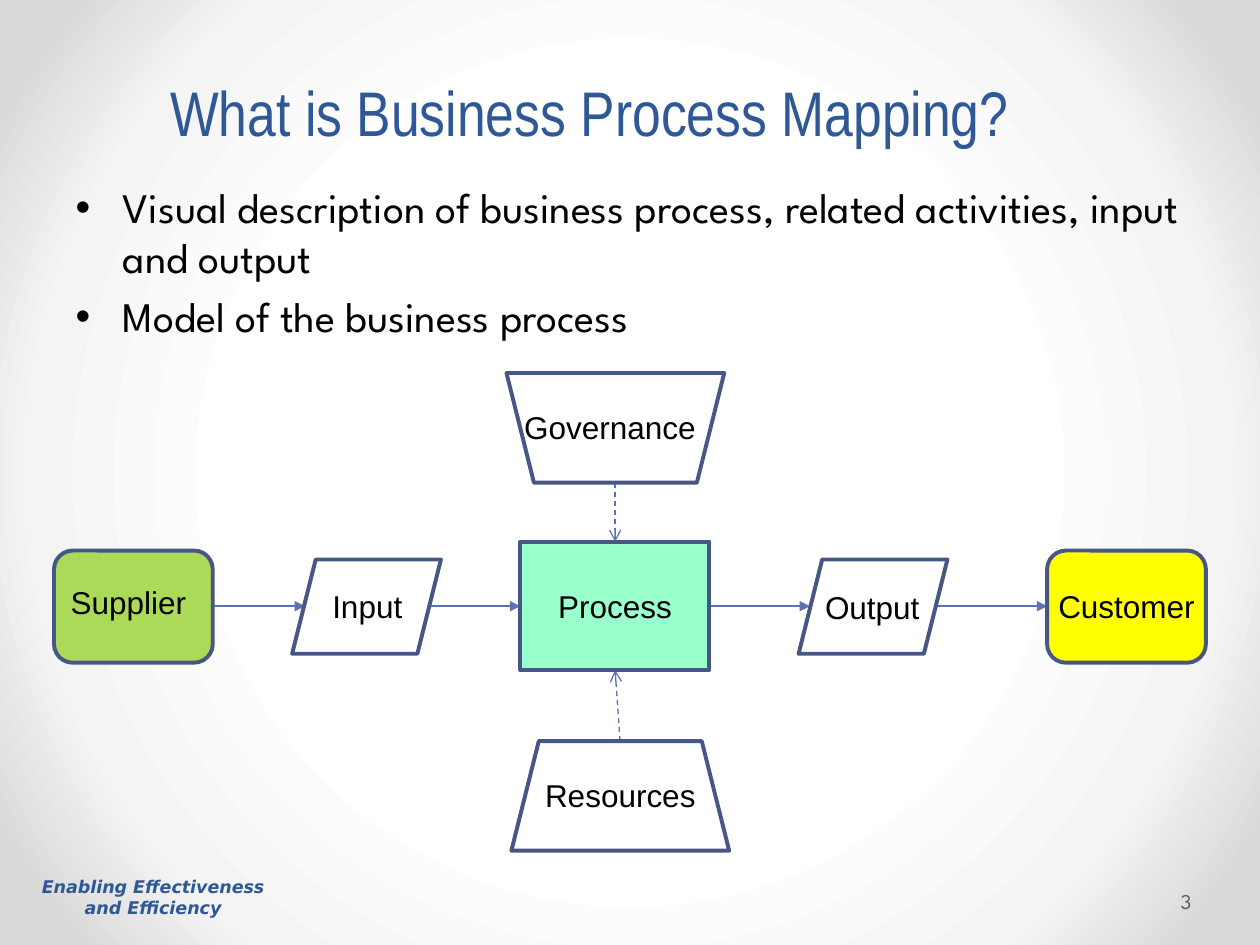
from dataclasses import dataclass

from lxml import etree
from pptx import Presentation
from pptx import util as u
from pptx.dml.color import RGBColor
from pptx.enum import dml, shapes, text
from pptx.oxml import ns


@dataclass(frozen=True)
class Theme:
    brand: str = "2F5897"
    ink: str = "000000"
    muted: str = "595959"
    outline: str = "475785"
    arrow: str = "5C72B2"
    process: str = "99FFCC"
    supplier: str = "ABD958"
    customer: str = "FFFF00"
    title_size: int = 36
    body_size: int = 24
    label_size: int = 18
    number_size: int = 12
    footer_size: int = 10


theme = Theme()


def write(paragraph, words, font, size, color, align=None):
    """Add one formatted run to a paragraph."""
    run = paragraph.add_run()
    run.text = words
    run.font.name = font
    run.font.size = u.Pt(size)
    run.font.color.rgb = RGBColor.from_string(color)
    paragraph.alignment = align
    return run


def place(shape, left, top, width, height):
    """Position a shape, in centimetres."""
    shape.left, shape.top = u.Cm(left), u.Cm(top)
    shape.width, shape.height = u.Cm(width), u.Cm(height)


prs = Presentation()
prs.slide_width, prs.slide_height = u.Cm(25.4), u.Cm(19.05)
slide = prs.slides.add_slide(prs.slide_layouts[1])
CENTER = text.PP_ALIGN.CENTER

# Background: white centre fading to grey edges
backdrop = slide.background.fill
backdrop.gradient()
gradient = slide.background._cSld.find(".//" + ns.qn("a:gradFill"))
for child in list(gradient):
    gradient.remove(child)
stops = etree.SubElement(gradient, ns.qn("a:gsLst"))
for percent, color in ((50, "FFFFFF"), (76, "F4F4F4"), (92, "DADADA")):
    stop = etree.SubElement(stops, ns.qn("a:gs"), pos=str(percent * 1000))
    etree.SubElement(stop, ns.qn("a:srgbClr"), val=color)
circle = etree.SubElement(gradient, ns.qn("a:path"), path="circle")
etree.SubElement(circle, ns.qn("a:fillToRect"), l="50000", t="50000", r="50000", b="50000")

# Footer motto
motto = slide.shapes.add_textbox(u.Cm(0.48), u.Cm(17.53), u.Cm(5.21), u.Cm(1.12)).text_frame
motto.word_wrap = True
motto.add_paragraph()
for paragraph, words in zip(motto.paragraphs, ("Enabling Effectiveness", "and Efficiency")):
    run = write(paragraph, words, "DejaVu Sans", theme.footer_size, theme.brand, CENTER)
    run.font.bold = run.font.italic = True

# Title
title = slide.shapes.title
place(title, 1.27, 0.74, 21.23, 2.39)
title.text_frame.auto_size = text.MSO_AUTO_SIZE.NONE
title.text_frame.vertical_anchor = text.MSO_ANCHOR.BOTTOM
heading = title.text_frame.paragraphs[0]
heading.line_spacing = u.Pt(58)
write(heading, "What is Business Process Mapping?", "Arial Narrow",
      theme.title_size, theme.brand, CENTER)

# Definition list, with the bullets of the template
definition = slide.placeholders[1]
place(definition, 1.27, 3.53, 22.86, 13.49)
points = definition.text_frame
points.auto_size = text.MSO_AUTO_SIZE.NONE
points.add_paragraph()
for paragraph, words in zip(points.paragraphs, (
        "Visual description of business process, related activities, input and output",
        "Model of the business process")):
    write(paragraph, words, "League Spartan", theme.body_size, theme.ink)
points.paragraphs[0].space_before = u.Pt(0)

# Arrows: solid along the flow, dashed for governance and resources
flow_y = 12.22
flow = [(x1, flow_y, x2, flow_y, False) for x1, x2 in
        ((4.29, 6.15), (8.66, 10.49), (14.3, 16.33), (18.87, 21.11))]
support = [(12.4, 9.73, 12.4, 10.92, True), (12.5, 14.94, 12.4, 13.51, True)]
for x1, y1, x2, y2, dashed in flow + support:
    arrow = slide.shapes.add_connector(
        shapes.MSO_CONNECTOR.STRAIGHT, u.Cm(x1), u.Cm(y1), u.Cm(x2), u.Cm(y2))
    arrow.line.color.rgb = RGBColor.from_string(theme.arrow)
    arrow.line.width = u.Pt(0.75 if dashed else 1)
    if dashed:
        arrow.line.dash_style = dml.MSO_LINE.DASH
    etree.SubElement(arrow.line._get_or_add_ln(), ns.qn("a:tailEnd"),
                     type="arrow" if dashed else "triangle")
    etree.SubElement(arrow._element.spPr, ns.qn("a:effectLst"))

# Steps: label, preset, size, fill, rotation, left, top, then label left, top, width
kinds = shapes.MSO_SHAPE
END, DATA, SIDE = (3.2, 2.26), (3, 1.9), (4.39, 2.21)
steps = (
    ("Process", kinds.RECTANGLE, (3.81, 2.59), theme.process, 0,
     10.49, 10.92, 10.8, 11.71, 3.2),
    ("Input", kinds.PARALLELOGRAM, DATA, None, 0, 5.89, 11.28, 6.4, 11.71, 2.01),
    ("Output", kinds.PARALLELOGRAM, DATA, None, 0, 16.1, 11.28, 16.33, 11.73, 2.51),
    ("Customer", kinds.FLOWCHART_ALTERNATE_PROCESS, END, theme.customer, 0,
     21.11, 11.1, 21.01, 11.71, 3.4),
    ("Supplier", kinds.FLOWCHART_ALTERNATE_PROCESS, END, theme.supplier, 0,
     1.09, 11.1, 0.89, 11.63, 3.4),
    ("Resources", kinds.TRAPEZOID, SIDE, None, 0, 10.31, 14.94, 10.69, 15.52, 3.63),
    ("Governance", kinds.TRAPEZOID, SIDE, None, 180, 10.21, 7.52, 10.29, 8.1, 4.01),
)
for name, kind, size, fill, turn, left, top, label_left, label_top, label_width in steps:
    step = slide.shapes.add_group_shape()
    outline = step.shapes.add_shape(kind, u.Cm(left), u.Cm(top), u.Cm(size[0]), u.Cm(size[1]))
    outline.rotation = turn
    outline.shadow.inherit = False
    outline.line.color.rgb = RGBColor.from_string(theme.outline)
    outline.line.width = u.Pt(2.25)
    if fill:
        outline.fill.solid()
        outline.fill.fore_color.rgb = RGBColor.from_string(fill)
    else:
        outline.fill.background()
    label = step.shapes.add_textbox(
        u.Cm(label_left), u.Cm(label_top), u.Cm(label_width), u.Cm(1.02)).text_frame
    label.word_wrap = True
    write(label.paragraphs[0], name, "Arial", theme.label_size, theme.ink, CENTER)

# Slide number
number = slide.shapes.add_textbox(u.Cm(23.72), u.Cm(17.65), u.Cm(1.55), u.Cm(1.02)).text_frame
number.word_wrap = True
number.vertical_anchor = text.MSO_ANCHOR.MIDDLE
number.margin_left, number.margin_right = u.Cm(0.08), u.Cm(0.13)
write(number.paragraphs[0], "3", "League Spartan", theme.number_size, theme.muted)

prs.save("out.pptx")
